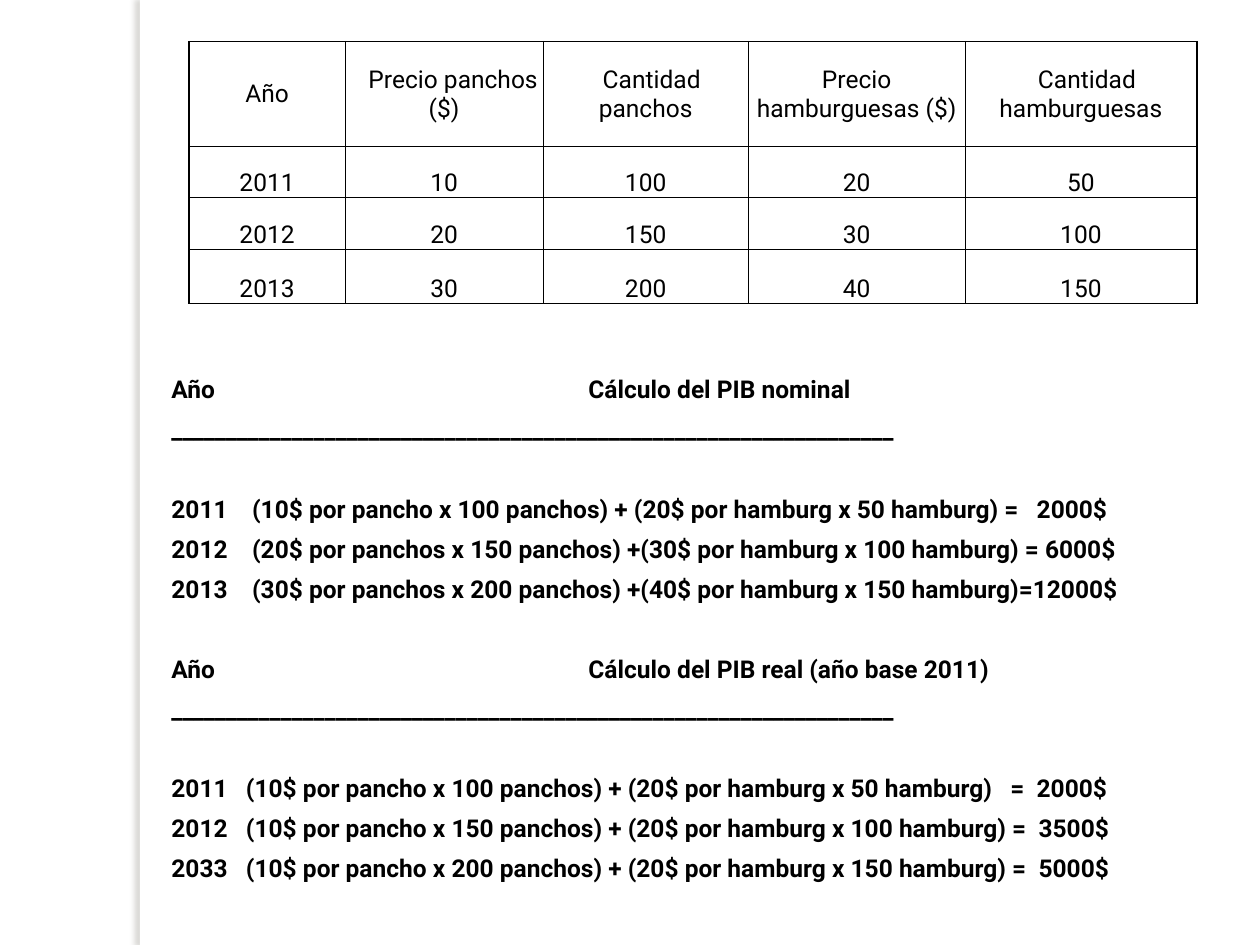
import dataclasses

import lxml.etree
import pptx
import pptx.dml.color
import pptx.enum.shapes
import pptx.enum.text
import pptx.oxml
import pptx.oxml.ns
import pptx.util

Inches, Pt = pptx.util.Inches, pptx.util.Pt
qn = pptx.oxml.ns.qn

WIDTH, HEIGHT = Inches(10), Inches(7.5)
FONT, FONT_SIZE = "Roboto", Pt(14)
COLORS = {"text": "000000", "panel": "FFFFFF", "shadow": "736F63"}
THIN, THICK = Pt(0.5), Pt(1)
GAP = Pt(6)
SECTION_GAP = Pt(28.8)  # one text line plus two paragraph gaps
RULE = "_" * 66

COLUMN_WIDTHS = [1.24, 1.57, 1.63, 1.72, 1.84]
ROW_HEIGHTS = [0.83, 0.41, 0.41, 0.43]
PRICE_TABLE = [
    ["Año", "   Precio panchos ($)", "  Cantidad panchos",
     "Precio hamburguesas ($)", "  Cantidad hamburguesas"],
    ["2011", "10", "100", "20", "50"],
    ["2012", "20", "150", "30", "100"],
    ["2013", "30", "200", "40", "150"],
]


@dataclasses.dataclass
class Calculation:
    title: str
    lines: list[str]


CALCULATIONS = [
    Calculation("Cálculo del PIB nominal", [
        "2011    (10$ por pancho x 100 panchos) + (20$ por hamburg x 50 hamburg) =   2000$",
        "2012    (20$ por panchos x 150 panchos) +(30$ por hamburg x 100 hamburg) = 6000$",
        "2013    (30$ por panchos x 200 panchos) +(40$ por hamburg x 150 hamburg)=12000$",
    ]),
    Calculation("Cálculo del PIB real (año base 2011)", [
        "2011   (10$ por pancho x 100 panchos) + (20$ por hamburg x 50 hamburg)   =  2000$",
        "2012   (10$ por pancho x 150 panchos) + (20$ por hamburg x 100 hamburg) =  3500$",
        "2033   (10$ por pancho x 200 panchos) + (20$ por hamburg x 150 hamburg) =  5000$",
    ]),
]


def rgb(name: str) -> pptx.dml.color.RGBColor:
    return pptx.dml.color.RGBColor.from_string(COLORS[name])


def add_color(parent, name: str):
    return lxml.etree.SubElement(parent, qn("a:srgbClr"), val=COLORS[name])


def style_font(paragraph, bold: bool) -> None:
    font = paragraph.font
    font.name, font.size, font.bold = FONT, FONT_SIZE, bold
    font.color.rgb = rgb("text")


def add_side_panel(slide) -> None:
    """Draw the white strip whose shadow falls to the left."""
    panel = slide.shapes.add_shape(
        pptx.enum.shapes.MSO_SHAPE.RECTANGLE, Inches(1.11), 0, Inches(0.08), HEIGHT)
    panel.fill.solid()
    panel.fill.fore_color.rgb = rgb("panel")
    panel.line.fill.background()
    panel.shadow.inherit = False
    effects = panel.element.spPr.find(qn("a:effectLst"))
    shadow = lxml.etree.SubElement(
        effects, qn("a:outerShdw"), blurRad=str(Pt(3)), dist=str(Pt(3)),
        dir=str(180 * 60000), algn="ctr", rotWithShape="0")
    lxml.etree.SubElement(add_color(shadow, "shadow"), qn("a:alpha"), val="25000")


def fill_calculations(body) -> None:
    body.left, body.top = Inches(1.17), Inches(2.92)
    body.width, body.height = Inches(8.83), Inches(4.32)
    frame = body.text_frame
    frame.word_wrap = True
    frame.auto_size = pptx.enum.text.MSO_AUTO_SIZE.NONE
    frame.vertical_anchor = pptx.enum.text.MSO_ANCHOR.TOP
    entries = []
    for calculation in CALCULATIONS:
        entries.append(("Año\t\t\t" + calculation.title, SECTION_GAP if entries else GAP))
        entries.append((RULE, GAP))
        for index, line in enumerate(calculation.lines):
            entries.append((line, GAP if index else SECTION_GAP))
    for index, (text, space_before) in enumerate(entries):
        paragraph = frame.add_paragraph() if index else frame.paragraphs[0]
        paragraph.text = text
        paragraph.space_before = space_before
        style_font(paragraph, bold=True)
        properties = paragraph._p.get_or_add_pPr()
        properties.set("marL", str(Inches(0.4)))
        properties.set("indent", str(Inches(-0.31)))
        properties.set("defTabSz", str(Inches(1)))
        bullet = lxml.etree.Element(qn("a:buNone"))
        properties.find(qn("a:spcBef")).addnext(bullet)


def set_borders(cell, widths: dict[str, int]) -> None:
    """Put the border lines before the fill, as the schema asks."""
    properties = cell._tc.get_or_add_tcPr()
    for index, (side, width) in enumerate(widths.items()):
        line = pptx.oxml.parse_xml(
            f'<a:{side} xmlns:a="{pptx.oxml.ns.nsdecls("a").split(chr(34))[1]}" w="{width}"/>')
        add_color(lxml.etree.SubElement(line, qn("a:solidFill")), "text")
        properties.insert(index, line)


def add_price_table(slide) -> None:
    rows, columns = len(ROW_HEIGHTS), len(COLUMN_WIDTHS)
    table = slide.shapes.add_table(
        rows, columns, Inches(1.5), Inches(0.33),
        Inches(sum(COLUMN_WIDTHS)), Inches(sum(ROW_HEIGHTS))).table
    table.first_row = table.horz_banding = False
    for column, width in zip(table.columns, COLUMN_WIDTHS):
        column.width = Inches(width)
    for row, height in zip(table.rows, ROW_HEIGHTS):
        row.height = Inches(height)
    anchors = pptx.enum.text.MSO_ANCHOR
    for row, texts in enumerate(PRICE_TABLE):
        for column, text in enumerate(texts):
            cell = table.cell(row, column)
            cell.text = text
            cell.fill.background()
            cell.vertical_anchor = anchors.BOTTOM if row else anchors.MIDDLE
            cell.margin_left = cell.margin_right = cell.margin_top = Inches(0.01)
            cell.margin_bottom = 0
            paragraph = cell.text_frame.paragraphs[0]
            paragraph.alignment = pptx.enum.text.PP_ALIGN.CENTER
            style_font(paragraph, bold=False)
            set_borders(cell, {
                "lnL": THIN if column else THICK,
                "lnR": THICK if column == columns - 1 else THIN,
                "lnT": THIN if row else THICK,
                "lnB": THICK if row == rows - 1 else THIN,
            })


def main() -> None:
    presentation = pptx.Presentation()
    presentation.slide_width, presentation.slide_height = WIDTH, HEIGHT
    slide = presentation.slides.add_slide(presentation.slide_layouts[1])
    title, body = slide.placeholders
    title.element.getparent().remove(title.element)
    add_side_panel(slide)
    fill_calculations(body)
    slide.shapes._spTree.append(body.element)  # in front of the panel
    add_price_table(slide)
    presentation.save("out.pptx")


if __name__ == "__main__":
    main()
